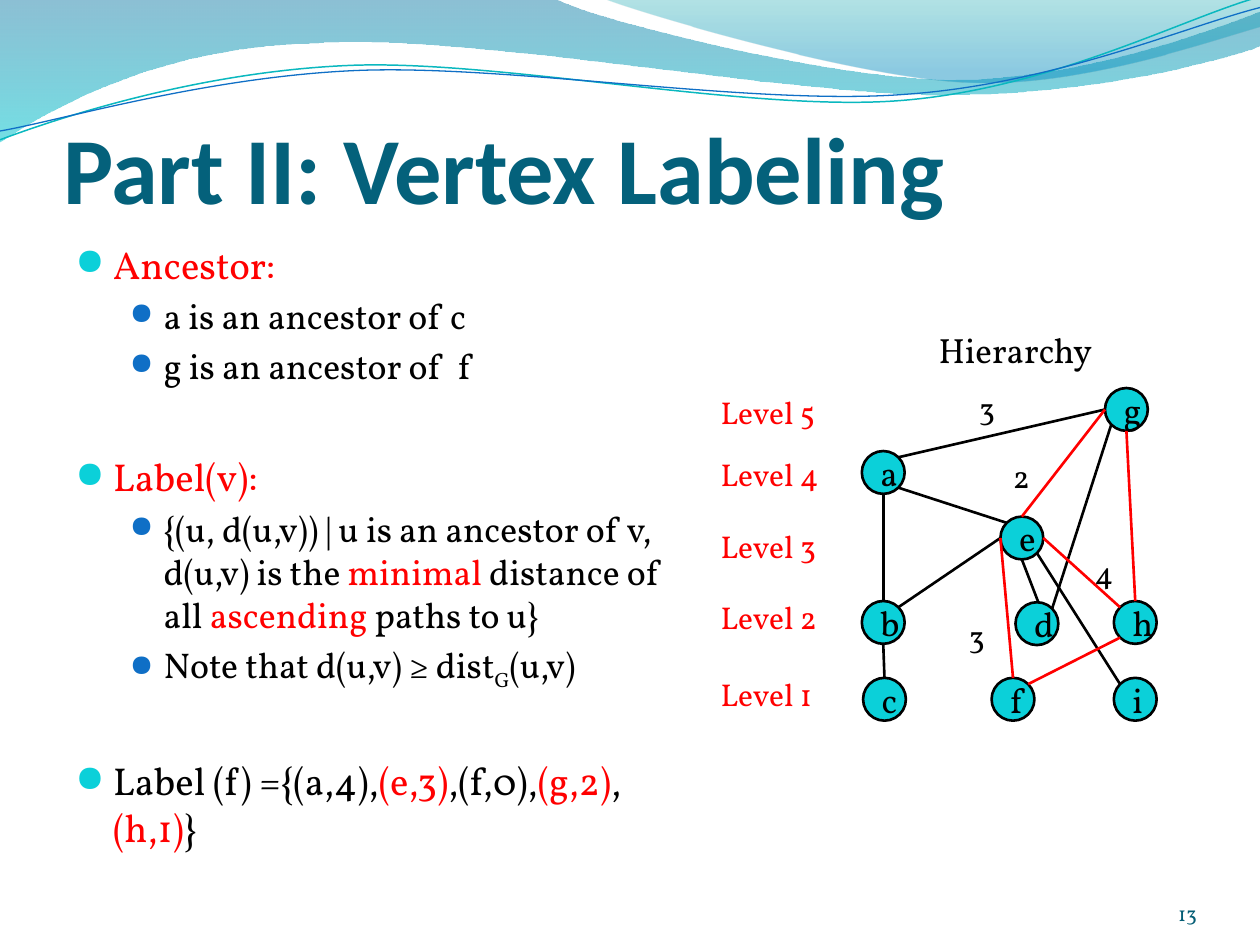
from lxml.etree import SubElement
from pptx import Presentation
from pptx.dml.color import RGBColor
from pptx.enum.shapes import MSO_CONNECTOR, MSO_SHAPE
from pptx.enum.text import MSO_ANCHOR, PP_ALIGN
from pptx.oxml.ns import qn
from pptx.util import Inches, Pt

BLACK = RGBColor(0x00, 0x00, 0x00)
RED = RGBColor(0xFF, 0x00, 0x00)
TEAL = RGBColor(0x04, 0x61, 0x7B)
NUMBER = RGBColor(0x04, 0x5D, 0x75)
CYAN = RGBColor(0x0B, 0xD0, 0xD9)
BLUE = RGBColor(0x0F, 0x6F, 0xC6)
AQUA = RGBColor(0x0A, 0xB8, 0xBF)
DEEP_BLUE = RGBColor(0x00, 0x74, 0xA1)
TURQUOISE = RGBColor(0x00, 0xC6, 0xCF)
DARK_CYAN = RGBColor(0x00, 0xA1, 0xA9)
SKY = RGBColor(0x00, 0x8B, 0xBF)

# Waves: a start point, then straight (2 numbers) or cubic (6 numbers) steps
BACK_WAVE = [(0, 0), (4.4, -0.01), (4.76, 0.17, 6.64, 0.63, 7.58, 0.63),
             (8.53, 0.63, 9.58, 0.26, 10, 0.09), (10.01, 0.36),
             (9.83, 0.44, 8.7, 0.76, 7.46, 0.75),
             (6.22, 0.75, 3.82, 0.28, 2.57, 0.34),
             (1.29, 0.36, 0.46, 0.83, -0.01, 1.13), (0, 0)]
FRONT_WAVE = [(4.79, -0.01), (5.09, 0.11, 6.82, 0.62, 7.69, 0.65),
              (8.56, 0.69, 9.61, 0.32, 10, 0.21), (10, 0), (4.79, -0.01)]
AQUA_CURVE = [(0, 1.11), (0.48, 0.93, 1.58, 0.57, 2.77, 0.52),
              (3.95, 0.47, 5.93, 0.89, 7.13, 0.8),
              (8.33, 0.71, 9.38, 0.15, 9.98, -0.02)]
BLUE_CURVE = [(0, 1.04), (0.47, 0.96, 1.64, 0.61, 2.83, 0.56),
              (4.03, 0.51, 5.97, 0.84, 7.17, 0.75),
              (8.36, 0.67, 9.41, 0.21, 10, 0.06)]

# Body: level, space before in points, spans of (text, colour)
BODY = [
    (0, 4.4, [("Ancestor:", RED)]),
    (1, 4.1, [("a is an ancestor of c", BLACK)]),
    (1, 4.1, [("g is an ancestor of  f", BLACK)]),
    (0, 37.6, [("Label(v):", RED)]),
    (1, 4.1, [("{(u, d(u,v)) | u is an ancestor of v, d(u,v) is the ", BLACK),
              ("minimal", RED), (" distance of all ", BLACK),
              ("ascending", RED), (" paths to u}", BLACK)]),
    (1, 4.1, [("Note that d(u,v) ≥ dist", BLACK), ("G", BLACK, "sub"),
              ("(u,v)", BLACK)]),
    (0, 37.6, [("Label (f) ={(a,4),", BLACK), ("(e,3)", RED),
               (",(f,0),", BLACK), ("(g,2)", RED), (",", BLACK),
               ("(h,1)", RED), ("}", BLACK)]),
]
# Per level: text size, left margin, indent, bullet colour, bullet percent
LEVELS = [(22.2, 0.3, -0.3, CYAN, 95), (20.4, 0.7, -0.27, BLUE, 85)]

# Graph: node centres, and edges between the sites on their rims
RADIUS = 0.17
NODES = {"a": (7.01, 3.75), "b": (7.01, 4.94), "c": (7.02, 5.55),
         "d": (8.23, 4.95), "e": (8.11, 4.27), "f": (8.04, 5.55),
         "g": (8.94, 3.25), "h": (9.01, 4.94), "i": (9.01, 5.55)}
SITES = {"N": (0, -1), "S": (0, 1), "W": (-1, 0), "E": (1, 0),
         "NW": (-0.71, -0.71), "NE": (0.71, -0.71),
         "SW": (-0.71, 0.71), "SE": (0.71, 0.71), "inner": (0.2, -0.65)}
EDGES = ["e S d inner", "g W a NE", "a S b N", "b S c N", "g SW d NE",
         "e SE i NW", "e NW a SE", "e W b NE"]
RED_EDGES = ["e W f N", "h SW f NE", "h NW e E", "g S h N", "g W e N"]
WEIGHTS = [("3", 7.67, 3.04), ("2", 7.94, 3.58), ("4", 8.59, 4.34),
           ("3", 7.59, 4.85)]
LEVEL_TOPS = [5.31, 4.7, 4.13, 3.56, 3.07]


def rim(node, site):
    return [c + RADIUS * d for c, d in zip(NODES[node], SITES[site])]


class SlidePainter:
    heading_font = "Calibri"
    text_font = "Vollkorn"
    line_width = Pt(1.5)

    def __init__(self, page):
        self.page = page

    def style(self, font, size, color, name=None):
        font.name, font.size = name or self.text_font, Pt(size)
        font.color.rgb = color

    def freeform(self, steps, close):
        points = [tuple(map(Inches, step[i:i + 2]))
                  for step in steps for i in range(0, len(step), 2)]
        builder = self.page.shapes.build_freeform(*points[0], scale=1.0)
        builder.add_line_segments(points[1:], close=close)
        shape = builder.convert_to_shape()
        shape.shadow.inherit = False
        # Join each three points of a cubic step into one curve
        segments = iter(list(shape._element.iter(qn("a:lnTo"))))
        for step in steps[1:]:
            first = next(segments)
            if len(step) == 6:
                first.tag = qn("a:cubicBezTo")
                for _ in range(2):
                    other = next(segments)
                    first.append(other[0])
                    other.getparent().remove(other)
        return shape

    def wave(self, steps, stops):
        shape = self.freeform(steps, True)
        shape.line.fill.background()
        shape.fill.gradient()
        shape.fill.gradient_angle = 270
        for stop, (position, color, _) in zip(shape.fill.gradient_stops, stops):
            stop.position, stop.color.rgb = position, color
        for color, (_, _, opacity) in zip(shape._element.iter(qn("a:srgbClr")), stops):
            SubElement(color, qn("a:alpha"), val=str(opacity * 1000))

    def curve(self, steps, color, width):
        shape = self.freeform(steps, False)
        shape.fill.background()
        shape.line.color.rgb, shape.line.width = color, Pt(width)

    def title(self, text, left, top, width, height):
        box = self.page.shapes.title
        box.left, box.top, box.width, box.height = map(Inches, (left, top, width, height))
        frame = box.text_frame
        frame.text, frame.vertical_anchor = text, MSO_ANCHOR.BOTTOM
        frame.margin_left = frame.margin_right = frame.margin_bottom = 0
        para = frame.paragraphs[0]
        para.alignment, para.font.bold = PP_ALIGN.LEFT, True
        self.style(para.font, 54, TEAL, self.heading_font)

    def text(self, text, left, top, width, height, size=18, color=BLACK):
        box = self.page.shapes.add_textbox(*map(Inches, (left, top, width, height)))
        frame = box.text_frame
        frame.word_wrap, frame.text = True, text
        self.style(frame.paragraphs[0].font, size, color)
        return frame

    def bullets(self, items, left, top, width, height):
        frame = self.text("", left, top, width, height)
        for number, (level, space, spans) in enumerate(items):
            para = frame.add_paragraph() if number else frame.paragraphs[0]
            size, margin, indent, color, percent = LEVELS[level]
            para.level, para.space_before = level, Pt(space)
            props = para._p.get_or_add_pPr()
            props.set("marL", str(Inches(margin)))
            props.set("indent", str(Inches(indent)))
            SubElement(SubElement(props, qn("a:buClr")), qn("a:srgbClr"), val=str(color))
            SubElement(props, qn("a:buSzPct"), val=str(percent * 1000))
            SubElement(props, qn("a:buFont"), typeface="OpenSymbol")
            SubElement(props, qn("a:buChar"), char="●")
            for words, ink, *subscript in spans:
                span = para.add_run()
                span.text = words
                self.style(span.font, size, ink)
                if subscript:
                    span._r.get_or_add_rPr().set("baseline", "-25000")

    def node(self, name, x, y):
        bounds = (x - RADIUS, y - RADIUS, 2 * RADIUS, 2 * RADIUS)
        shape = self.page.shapes.add_shape(MSO_SHAPE.OVAL, *map(Inches, bounds))
        shape.shadow.inherit = False
        shape.fill.solid()
        shape.fill.fore_color.rgb = CYAN
        shape.line.color.rgb, shape.line.width = BLACK, self.line_width
        frame = shape.text_frame
        frame.text, frame.vertical_anchor = name, MSO_ANCHOR.MIDDLE
        frame.paragraphs[0].alignment = PP_ALIGN.CENTER
        self.style(frame.paragraphs[0].font, 20, BLACK)

    def edge(self, ends, color):
        start, start_site, end, end_site = ends.split()
        points = rim(start, start_site) + rim(end, end_site)
        line = self.page.shapes.add_connector(MSO_CONNECTOR.STRAIGHT, *map(Inches, points))
        line.line.color.rgb, line.line.width = color, self.line_width
        SubElement(line._element.spPr, qn("a:effectLst"))


def main():
    deck = Presentation()
    deck.slide_width, deck.slide_height = Inches(10), Inches(7.5)
    painter = SlidePainter(deck.slides.add_slide(deck.slide_layouts[5]))

    # Waves along the top
    painter.wave(BACK_WAVE, [(0, DEEP_BLUE, 45), (1, TURQUOISE, 55)])
    painter.wave(FRONT_WAVE, [(0, DARK_CYAN, 30), (0.8, SKY, 45)])
    painter.curve(AQUA_CURVE, AQUA, 0.85)
    painter.curve(BLUE_CURVE, BLUE, 0.75)

    # Title, body and slide number
    painter.title("Part II: Vertex Labeling", 0.5, 0.52, 9, 1.25)
    painter.bullets(BODY, 0.5, 1.86, 4.97, 5.06)
    number = painter.text("13", 8.67, 6.95, 0.83, 0.4, 12, NUMBER)
    number.vertical_anchor = MSO_ANCHOR.BOTTOM
    number.margin_left = number.margin_right = number.margin_bottom = 0
    number.paragraphs[0].alignment = PP_ALIGN.RIGHT

    # Hierarchy graph
    for ends in EDGES:
        painter.edge(ends, BLACK)
    for name, centre in NODES.items():
        painter.node(name, *centre)
    for ends in RED_EDGES:
        painter.edge(ends, RED)

    # Graph labels
    for weight, left, top in WEIGHTS:
        painter.text(weight, left, top, 0.3, 0.4)
    for level, top in enumerate(LEVEL_TOPS, 1):
        painter.text(f"Level {level}", 5.62, top, 1.18, 0.4, color=RED)
    painter.text("Hierarchy", 7.35, 2.56, 1.61, 0.44, 20)

    deck.save("out.pptx")


if __name__ == "__main__":
    main()
